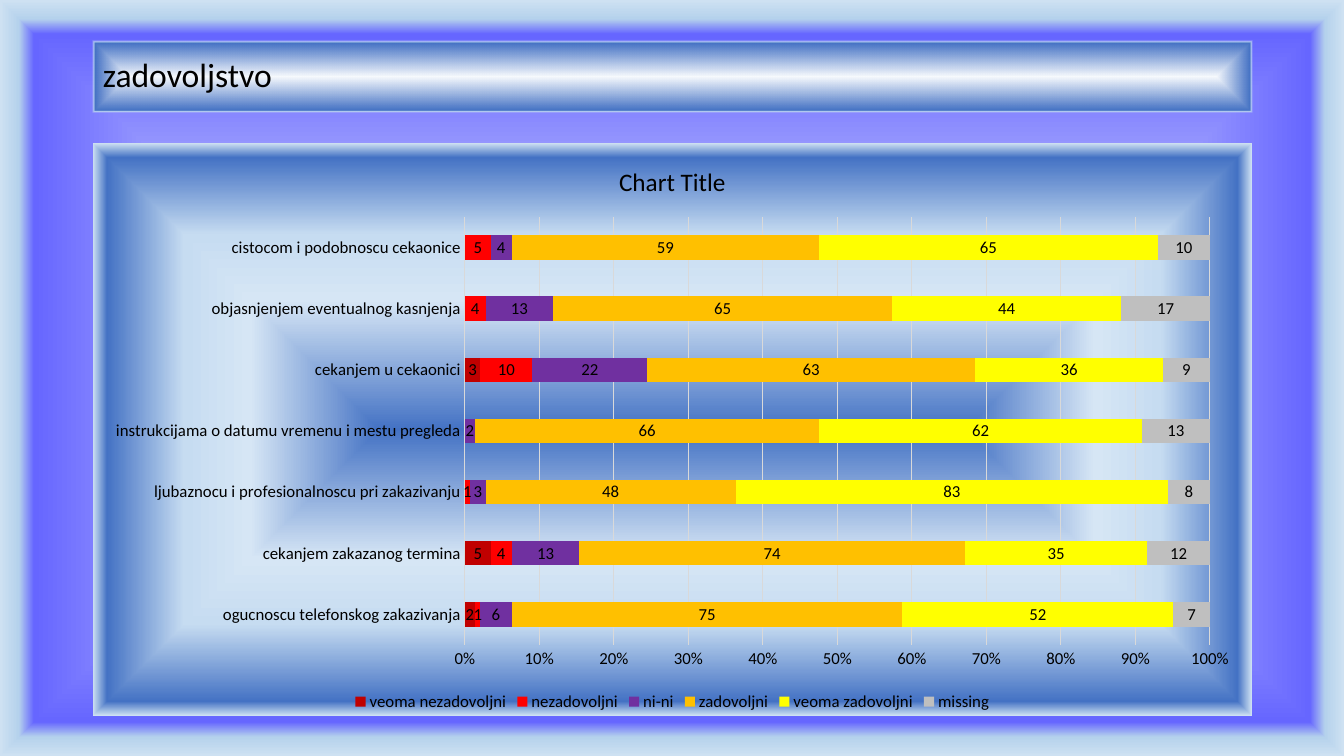
from dataclasses import dataclass
from typing import NamedTuple, Optional

from lxml import etree
from pptx import Presentation
from pptx.chart.data import CategoryChartData
from pptx.dml.color import RGBColor
from pptx.enum.chart import XL_CHART_TYPE, XL_LABEL_POSITION, XL_LEGEND_POSITION, XL_TICK_MARK
from pptx.enum.text import MSO_ANCHOR, PP_ALIGN
from pptx.oxml import parse_xml
from pptx.oxml.ns import nsdecls, qn
from pptx.util import Pt

BAR_STACKED_100 = XL_CHART_TYPE.BAR_STACKED_100
LABEL_CENTER = XL_LABEL_POSITION.CENTER
LEGEND_BOTTOM = XL_LEGEND_POSITION.BOTTOM
TICK_NONE = XL_TICK_MARK.NONE
MIDDLE = MSO_ANCHOR.MIDDLE
LEFT = PP_ALIGN.LEFT


class Stop(NamedTuple):
    percent: int
    color: str
    alpha: int = 100


class Box(NamedTuple):
    left: float
    top: float
    width: float
    height: float

    def lengths(self) -> list:
        return [Pt(v) for v in self]


@dataclass(frozen=True)
class Answer:
    name: str
    color: str
    counts: tuple[Optional[int], ...]


@dataclass(frozen=True)
class Theme:
    font: str = "Calibri"
    text: str = "000000"
    grid: str = "D9D9D9"
    title_size: int = 24
    chart_title_size: int = 18
    label_size: int = 12
    line_width: float = 0.75
    background: tuple[Stop, ...] = (
        Stop(0, "F7FAFD"), Stop(91, "6666FF"), Stop(95, "B5D2EC"), Stop(100, "CEE1F2"))
    title_fill: tuple[Stop, ...] = (
        Stop(0, "F7FAFD"), Stop(93, "4472C4"), Stop(95, "B5D2EC"), Stop(100, "CEE1F2", 0))
    chart_fill: tuple[Stop, ...] = (
        Stop(0, "F7FAFD"), Stop(0, "4472C4"), Stop(45, "D6E6F5"),
        Stop(68, "C6DCF1"), Stop(95, "4472C4"), Stop(100, "CEE1F2"))


THEME = Theme()
TITLE_BOX = Box(66.24, 28.8, 828, 51.84)
CHART_BOX = Box(66.24, 102.24, 828, 408.96)

QUESTIONS = (
    "ogucnoscu telefonskog zakazivanja",
    "cekanjem zakazanog termina",
    "ljubaznocu i profesionalnoscu pri zakazivanju",
    "instrukcijama o datumu vremenu i mestu pregleda",
    "cekanjem u cekaonici",
    "objasnjenjem eventualnog kasnjenja",
    "cistocom i podobnoscu cekaonice",
)
ANSWERS = (
    Answer("veoma nezadovoljni", "C00000", (2, 5, None, None, 3, None, None)),
    Answer("nezadovoljni", "FF0000", (1, 4, 1, None, 10, 4, 5)),
    Answer("ni-ni", "7030A0", (6, 13, 3, 2, 22, 13, 4)),
    Answer("zadovoljni", "FFC000", (75, 74, 48, 66, 63, 65, 59)),
    Answer("veoma zadovoljni", "FFFF00", (52, 35, 83, 62, 36, 44, 65)),
    Answer("missing", "BFBFBF", (7, 12, 8, 13, 9, 17, 10)),
)


def rectangular_gradient(stops: tuple[Stop, ...]) -> etree._Element:
    """Return a gradient that runs from the centre of a box to its edges."""
    marks = "".join(
        f'<a:gs pos="{s.percent * 1000}"><a:srgbClr val="{s.color}">'
        f'<a:alpha val="{s.alpha * 1000}"/></a:srgbClr></a:gs>' for s in stops)
    return parse_xml(
        f'<a:gradFill {nsdecls("a")} rotWithShape="1"><a:gsLst>{marks}</a:gsLst>'
        '<a:path path="shape"><a:fillToRect l="50000" t="50000" r="50000" b="50000"/>'
        '</a:path></a:gradFill>')


def fill_gradient(fill, owner, stops: tuple[Stop, ...]) -> None:
    """Put a gradient where the owner's solid fill would be."""
    fill.solid()
    solid = next(owner.iter(qn("a:solidFill")))
    solid.getparent().replace(solid, rectangular_gradient(stops))


def set_font(font, size: float) -> None:
    font.name = THEME.font
    font.size = Pt(size)
    font.bold = False
    font.color.rgb = RGBColor.from_string(THEME.text)


def set_line(line) -> None:
    line.color.rgb = RGBColor.from_string(THEME.grid)
    line.width = Pt(THEME.line_width)


def add_title(slide, text: str) -> None:
    sp = slide.shapes.title
    sp.left, sp.top, sp.width, sp.height = TITLE_BOX.lengths()
    fill_gradient(sp.fill, sp.element.spPr, THEME.title_fill)
    tf = sp.text_frame
    tf.text = text
    tf.vertical_anchor = MIDDLE
    p = tf.paragraphs[0]
    p.alignment = LEFT
    p.line_spacing = 0.9
    set_font(p.font, THEME.title_size)


def format_axis(axis) -> None:
    axis.major_tick_mark = axis.minor_tick_mark = TICK_NONE
    set_font(axis.tick_labels.font, THEME.label_size)


def add_satisfaction_chart(slide) -> None:
    data = CategoryChartData()
    data.categories = QUESTIONS
    for answer in ANSWERS:
        data.add_series(answer.name, answer.counts)
    chart = slide.shapes.add_chart(BAR_STACKED_100, *CHART_BOX.lengths(), data).chart
    set_font(chart.font, THEME.label_size)

    area = parse_xml(f'<c:spPr {nsdecls("c", "a")}/>')
    area.append(rectangular_gradient(THEME.chart_fill))
    chart.element.find(qn("c:txPr")).addprevious(area)

    chart.has_title = True
    tf = chart.chart_title.text_frame
    tf.text = "Chart Title"
    set_font(tf.paragraphs[0].font, THEME.chart_title_size)
    chart.chart_title.include_in_layout = False

    chart.has_legend = True
    chart.legend.position = LEGEND_BOTTOM
    chart.legend.include_in_layout = False
    set_font(chart.legend.font, THEME.label_size)

    format_axis(chart.category_axis)
    set_line(chart.category_axis.format.line)
    values = chart.value_axis
    format_axis(values)
    values.format.line.fill.background()
    values.has_major_gridlines = True
    set_line(values.major_gridlines.format.line)
    values.tick_labels.number_format = "0%"
    values.tick_labels.number_format_is_linked = False

    plot = chart.plots[0]
    plot.gap_width = 150
    plot.overlap = 100
    plot.vary_by_categories = False
    for series, answer in zip(plot.series, ANSWERS):
        series.format.fill.solid()
        series.format.fill.fore_color.rgb = RGBColor.from_string(answer.color)
        labels = series.data_labels
        labels.show_value = True
        labels.position = LABEL_CENTER
        set_font(labels.font, THEME.label_size)


def main() -> None:
    prs = Presentation()
    prs.slide_width, prs.slide_height = Pt(960), Pt(540)
    slide = prs.slides.add_slide(prs.slide_layouts[5])
    fill_gradient(slide.background.fill, slide.element, THEME.background)
    add_title(slide, "zadovoljstvo")
    add_satisfaction_chart(slide)
    prs.save("out.pptx")


if __name__ == "__main__":
    main()
